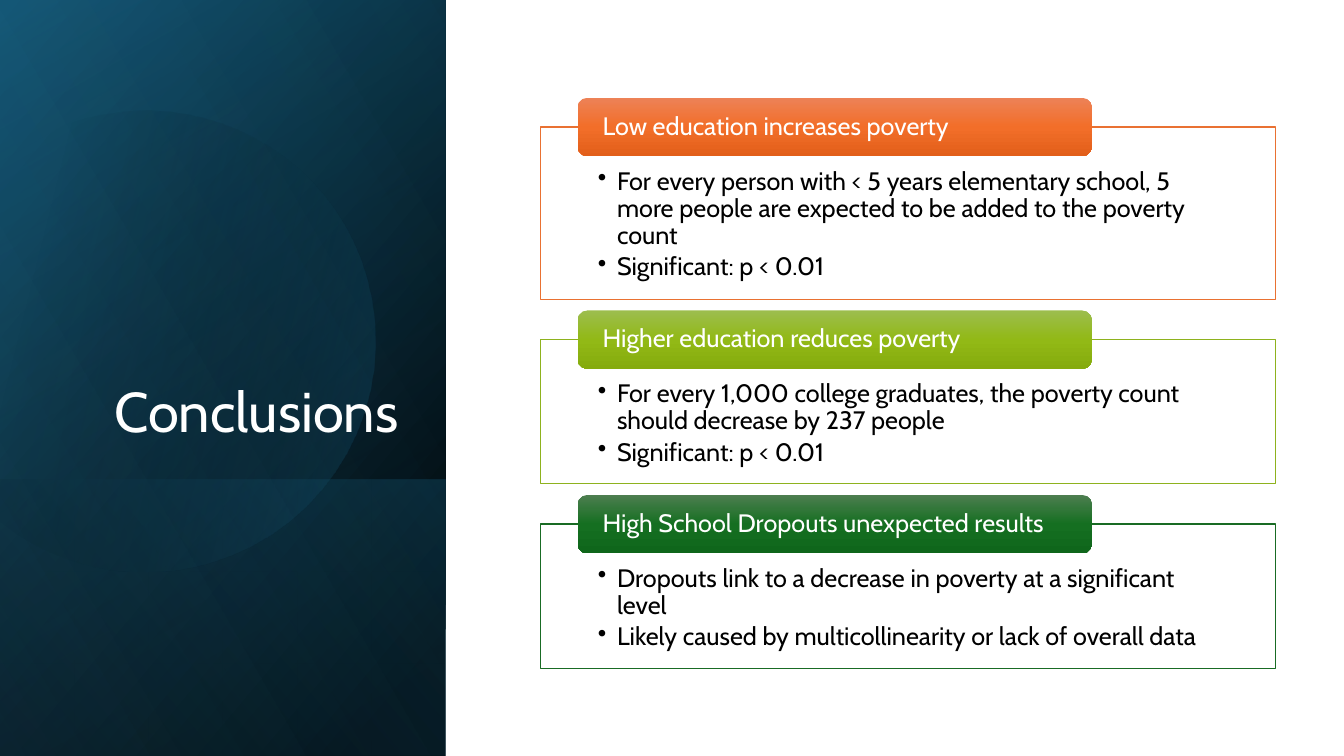
import math
from dataclasses import dataclass
from typing import Any, NamedTuple

import lxml.etree
import pptx
import pptx.dml.color
import pptx.enum.shapes
import pptx.enum.text
import pptx.oxml.ns
import pptx.shapes.autoshape
import pptx.slide
import pptx.text.text
import pptx.util

Inches = pptx.util.Inches
Shapes = pptx.enum.shapes.MSO_SHAPE
Anchor = pptx.enum.text.MSO_ANCHOR
Align = pptx.enum.text.PP_ALIGN
Shape = pptx.shapes.autoshape.Shape
qn = pptx.oxml.ns.qn


@dataclass(frozen=True)
class Theme:
    font: str = "Cabin"
    white: str = "FFFFFF"
    black: str = "000000"
    teal: str = "156082"
    deep_teal: str = "104862"
    sky: str = "46B1E1"
    title_size: int = 40
    text_size: int = 18


class Stop(NamedTuple):
    position: int
    color: str
    opacity: int = 100


class Gradient(NamedTuple):
    stops: list[Stop]
    angle: float


class Box(NamedTuple):
    left: float
    top: float
    width: float
    height: float


class Layer(NamedTuple):
    box: Box
    gradient: Gradient


class Card(NamedTuple):
    heading: str
    bullets: list[str]
    height: float
    outline: str
    shades: list[str]


THEME = Theme()
PANEL = Box(-1.54, 1.54, 7.5, 4.42)
LAYERS_BELOW = [
    Layer(PANEL, Gradient([Stop(8, THEME.black), Stop(100, THEME.deep_teal)], 50)),
    Layer(PANEL, Gradient([Stop(0, THEME.black, 0), Stop(99, THEME.teal, 46)], 30)),
    Layer(Box(0.84, 3.92, 2.74, 4.42),
          Gradient([Stop(2, THEME.teal, 29), Stop(100, THEME.black, 30)], 130)),
]
SHEEN = Layer(PANEL, Gradient([Stop(0, THEME.sky, 0), Stop(99, THEME.sky, 11)], 120))
DISC = Layer(Box(-0.55, 1.06, 4.27, 4.57),
             Gradient([Stop(29, THEME.black, 0), Stop(100, THEME.teal, 43)], 30))
DISC_ROTATION = 343.9
DISC_START = (1.49, 1.1)
DISC_CURVES = [
    [(2.46, 1.12), (3.35, 1.77), (3.63, 2.75)],
    [(3.98, 3.97), (3.28, 5.23), (2.07, 5.58)],
    [(1.31, 5.8), (0.53, 5.61), (-0.03, 5.14)],
    [(-0.15, 5.03), (-0.15, 1.75), (0, 1.61)],
    [(0.23, 1.42), (0.5, 1.28), (0.8, 1.19)],
    [(1.03, 1.13), (1.26, 1.1), (1.49, 1.1)],
]
DISC_STRAIGHT = 3
CARDS = [
    Card("Low education increases poverty",
         ["For every person with < 5 years elementary school, 5 more people "
          "are expected to be added to the poverty count", "Significant: p < 0.01"],
         1.71, "E97132", ["ED8257", "F26E29", "E25F1A"]),
    Card("Higher education reduces poverty",
         ["For every 1,000 college graduates, the poverty count should decrease "
          "by 237 people", "Significant: p < 0.01"],
         1.43, "8EB21E", ["9CBD4E", "92B916", "85AB0D"]),
    Card("High School Dropouts unexpected results",
         ["Dropouts link to a decrease in poverty at a significant level",
          "Likely caused by multicollinearity or lack of overall data"],
         1.43, "196B24", ["4D7E50", "156F21", "0F661B"]),
]
CARDS_TOP = 1.26
CARD_GAP = 0.4


def rgb(color: str) -> pptx.dml.color.RGBColor:
    return pptx.dml.color.RGBColor.from_string(color)


def assign(target: Any, values: dict[str, Any]) -> None:
    for name, value in values.items():
        setattr(target, name, value)


def paint_gradient(shape: Shape, gradient: Gradient) -> None:
    shape.shadow.inherit = False
    shape.line.fill.background()
    shape.fill.background()
    fill = lxml.etree.Element(qn("a:gradFill"), rotWithShape="1")
    stop_list = lxml.etree.SubElement(fill, qn("a:gsLst"))
    for stop in gradient.stops:
        entry = lxml.etree.SubElement(stop_list, qn("a:gs"), pos=str(stop.position * 1000))
        color = lxml.etree.SubElement(entry, qn("a:srgbClr"), val=stop.color)
        if stop.opacity < 100:
            lxml.etree.SubElement(color, qn("a:alpha"), val=str(stop.opacity * 1000))
    lxml.etree.SubElement(fill, qn("a:lin"), ang=str(round(gradient.angle * 60000)), scaled="0")
    properties = shape._element.spPr
    properties.replace(properties.find(qn("a:noFill")), fill)


def add_box(page: pptx.slide.Slide, kind: Shapes, box: Box) -> Shape:
    return page.shapes.add_shape(kind, *map(Inches, box))


def add_layer(page: pptx.slide.Slide, layer: Layer) -> None:
    shape = add_box(page, Shapes.RECTANGLE, layer.box)
    paint_gradient(shape, layer.gradient)
    shape.rotation = 90
    shape._element.spPr.find(qn("a:xfrm")).set("flipH", "1")


def disc_points(steps: int = 16) -> list[tuple[float, float]]:
    points = [DISC_START]
    for index, curve in enumerate(DISC_CURVES):
        if index == DISC_STRAIGHT:
            points += curve
            continue
        controls = [points[-1], *curve]
        for step in range(1, steps + 1):
            t = step / steps
            weights = [math.comb(3, k) * t ** k * (1 - t) ** (3 - k) for k in range(4)]
            points.append((sum(w * x for w, (x, _) in zip(weights, controls)),
                           sum(w * y for w, (_, y) in zip(weights, controls))))
    return points


def add_disc(page: pptx.slide.Slide) -> None:
    center_x = DISC.box.left + DISC.box.width / 2
    center_y = DISC.box.top + DISC.box.height / 2
    turn = math.radians(-DISC_ROTATION)
    points = []
    for x, y in disc_points():
        across, down = x - center_x, y - center_y
        points.append((Inches(center_x + across * math.cos(turn) - down * math.sin(turn)),
                       Inches(center_y + across * math.sin(turn) + down * math.cos(turn))))
    builder = page.shapes.build_freeform(*points[0])
    builder.add_line_segments(points[1:], close=True)
    shape = builder.convert_to_shape()
    paint_gradient(shape, DISC.gradient)
    shape.rotation = DISC_ROTATION


def write(shape: Shape, lines: list[str], size: int, color: str, frame_format: dict[str, Any],
          para_format: dict[str, Any], bulleted: bool = False) -> None:
    frame = shape.text_frame
    assign(frame, {"word_wrap": True, **frame_format})
    for index, line in enumerate(lines):
        para = frame.add_paragraph() if index else frame.paragraphs[0]
        assign(para, {"line_spacing": 0.9, **para_format})
        if bulleted:
            properties = para._p.get_or_add_pPr()
            indent = Inches(0.19)
            properties.set("marL", str(indent))
            properties.set("indent", str(-indent))
            lxml.etree.SubElement(properties, qn("a:buChar"), char="•")
        span = para.add_run()
        assign(span, {"text": line})
        assign(span.font, {"name": THEME.font, "size": pptx.util.Pt(size)})
        span.font.color.rgb = rgb(color)


def add_card(page: pptx.slide.Slide, card: Card, top: float) -> None:
    body = add_box(page, Shapes.RECTANGLE, Box(5.36, top, 7.29, card.height))
    body.shadow.inherit = False
    body.fill.solid()
    body.fill.fore_color.rgb = rgb(THEME.white)
    body.line.color.rgb = rgb(card.outline)
    body.line.width = pptx.util.Pt(1)
    write(body, card.bullets, THEME.text_size, THEME.black,
          {"vertical_anchor": Anchor.TOP, "margin_left": Inches(0.57), "margin_top": Inches(0.41),
           "margin_right": Inches(0.57), "margin_bottom": Inches(0.14)},
          {"alignment": Align.LEFT, "space_after": pptx.util.Pt(3)}, bulleted=True)
    header = add_box(page, Shapes.ROUNDED_RECTANGLE, Box(5.73, top - 0.29, 5.1, 0.58))
    stops = [Stop(50 * index, shade) for index, shade in enumerate(card.shades)]
    paint_gradient(header, Gradient(stops, 90))
    write(header, [card.heading], THEME.text_size, THEME.white,
          {"vertical_anchor": Anchor.MIDDLE, "margin_left": Inches(0.22), "margin_top": 0,
           "margin_right": Inches(0.22), "margin_bottom": 0}, {"alignment": Align.LEFT})


def main() -> None:
    deck = pptx.Presentation()
    assign(deck, {"slide_width": Inches(13.33), "slide_height": Inches(7.5)})
    page = deck.slides.add_slide(deck.slide_layouts[6])
    for layer in LAYERS_BELOW:
        add_layer(page, layer)
    add_disc(page)
    add_layer(page, SHEEN)
    title = page.shapes.add_textbox(*map(Inches, Box(0.64, 1.84, 3.41, 2.62)))
    write(title, ["Conclusions"], THEME.title_size, THEME.white,
          {"vertical_anchor": Anchor.BOTTOM}, {"alignment": Align.RIGHT})
    top = CARDS_TOP
    for card in CARDS:
        add_card(page, card, top)
        top += card.height + CARD_GAP
    deck.save("out.pptx")


if __name__ == "__main__":
    main()
